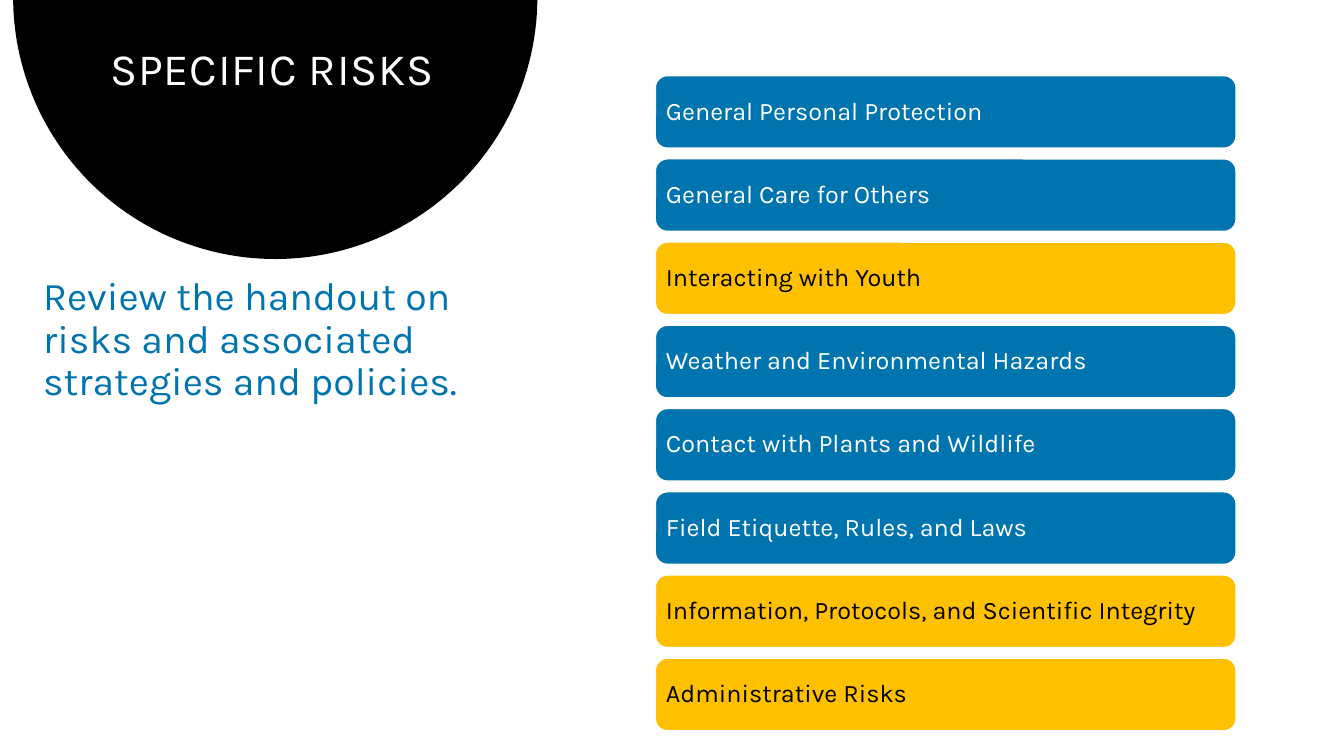
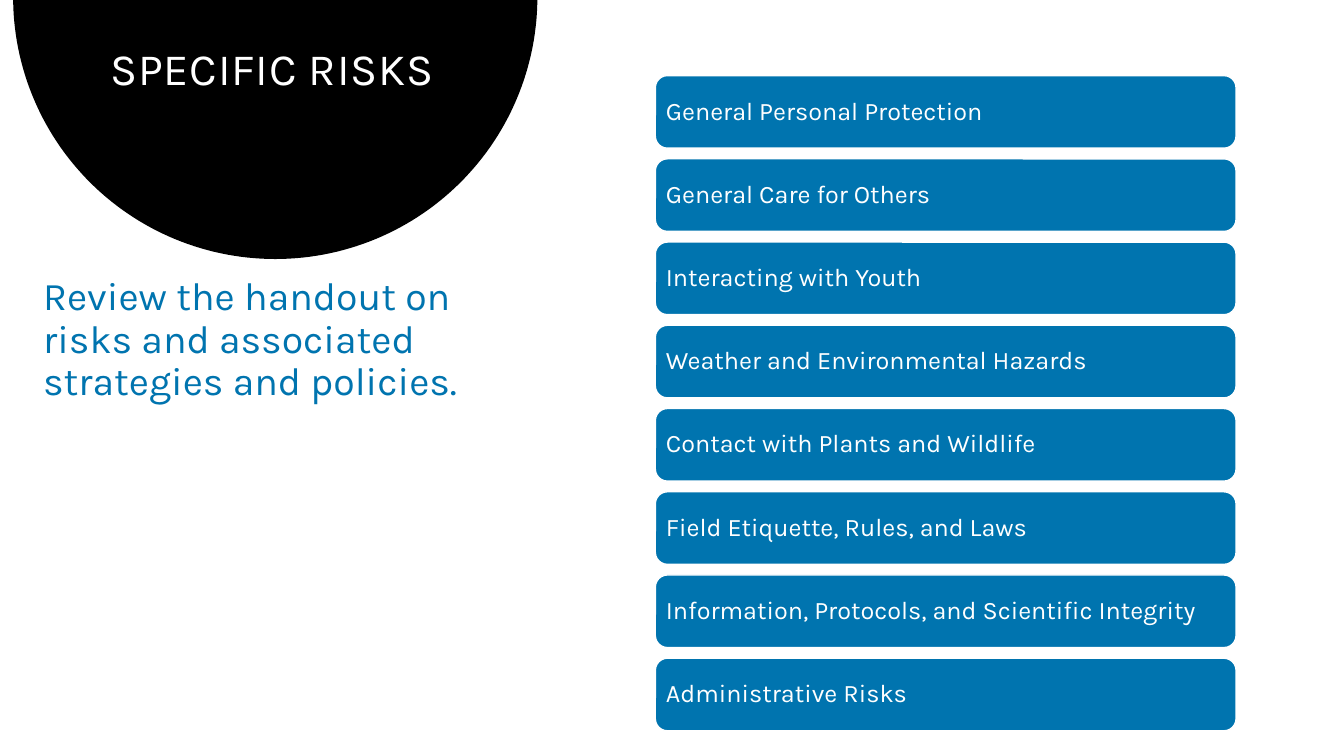
import math
from pptx import Presentation
from pptx.dml.color import RGBColor
from pptx.enum import shapes, text
from pptx.util import Inches, Pt

FONT = "Karla"
BLACK = RGBColor(0x00, 0x00, 0x00)
WHITE = RGBColor(0xFF, 0xFF, 0xFF)
BLUE = RGBColor(0x00, 0x74, 0xAF)
AMBER = RGBColor(0xFF, 0xC0, 0x00)

TITLE = "SPECIFIC RISKS"
PROMPT = "Review the handout on risks and associated strategies and policies."
RISKS = [
    "General Personal Protection",
    "General Care for Others",
    "Interacting with Youth",
    "Weather and Environmental Hazards",
    "Contact with Plants and Wildlife",
    "Field Etiquette, Rules, and Laws",
    "Information, Protocols, and Scientific Integrity",
    "Administrative Risks",
]
HIGHLIGHTS = [
    {
        "Interacting with Youth",
        "Information, Protocols, and Scientific Integrity",
        "Administrative Risks",
    },
    set(),
]

DISC_X, DISC_Y, DISC_RADIUS = 2.73, -0.03, 2.6
DISC_STEPS = 120
BAR_LEFT, BAR_WIDTH, BAR_HEIGHT = 6.5, 5.76, 0.72
FIRST_BAR_TOP, LAST_BAR_TOP = 0.75, 6.53


def paint(shape, fill, line=None):
    shape.shadow.inherit = False
    shape.fill.solid()
    shape.fill.fore_color.rgb = fill
    if line is None:
        shape.line.fill.background()
    else:
        shape.line.color.rgb = line
        shape.line.width = Pt(1)


def write(shape, words, size, color, insets=(0.1, 0.05, 0.1, 0.05),
          align=text.PP_ALIGN.LEFT, anchor=text.MSO_ANCHOR.TOP):
    frame = shape.text_frame
    frame.word_wrap = True
    frame.vertical_anchor = anchor
    frame.margin_left, frame.margin_top, frame.margin_right, frame.margin_bottom = map(Inches, insets)
    paragraph = frame.paragraphs[0]
    paragraph.alignment = align
    paragraph.line_spacing = 0.9
    run = paragraph.add_run()
    run.text = words
    run.font.name = FONT
    run.font.size = Pt(size)
    run.font.color.rgb = color
    return run


def add_box(slide, *bounds):
    return slide.shapes.add_textbox(*map(Inches, bounds))


def add_disc(slide):
    start = math.asin(-DISC_Y / DISC_RADIUS)
    sweep = math.pi - 2 * start
    angles = [start + sweep * step / DISC_STEPS for step in range(DISC_STEPS + 1)]
    points = [
        (Inches(DISC_X + DISC_RADIUS * math.cos(angle)),
         Inches(DISC_Y + DISC_RADIUS * math.sin(angle)))
        for angle in angles
    ]
    builder = slide.shapes.build_freeform(*points[0])
    builder.add_line_segments(points[1:], close=True)
    paint(builder.convert_to_shape(), BLACK)


def add_heading(slide):
    add_disc(slide)
    title = write(add_box(slide, 0.33, 0, 4.74, 1), TITLE, 32, WHITE,
                  (0.16, 0.46, 0.16, 0.05), text.PP_ALIGN.CENTER)
    title.font._element.set("spc", "60")
    write(add_box(slide, 0.33, 2.7, 4.99, 1.37), PROMPT, 28, BLUE)


def add_risk_bars(slide, highlighted):
    pitch = (LAST_BAR_TOP - FIRST_BAR_TOP) / (len(RISKS) - 1)
    for index, risk in enumerate(RISKS):
        bounds = (BAR_LEFT, FIRST_BAR_TOP + index * pitch, BAR_WIDTH, BAR_HEIGHT)
        bar = slide.shapes.add_shape(
            shapes.MSO_SHAPE.ROUNDED_RECTANGLE, *map(Inches, bounds))
        fill, color = (AMBER, BLACK) if risk in highlighted else (BLUE, WHITE)
        paint(bar, fill, WHITE)
        write(bar, risk, 18, color, (0.07, 0.07, 0.07, 0.07),
              anchor=text.MSO_ANCHOR.MIDDLE)


def main():
    presentation = Presentation()
    presentation.slide_width = Inches(13.33)
    presentation.slide_height = Inches(7.5)
    for highlighted in HIGHLIGHTS:
        slide = presentation.slides.add_slide(presentation.slide_layouts[6])
        add_heading(slide)
        add_risk_bars(slide, highlighted)
    presentation.save("out.pptx")


if __name__ == "__main__":
    main()
